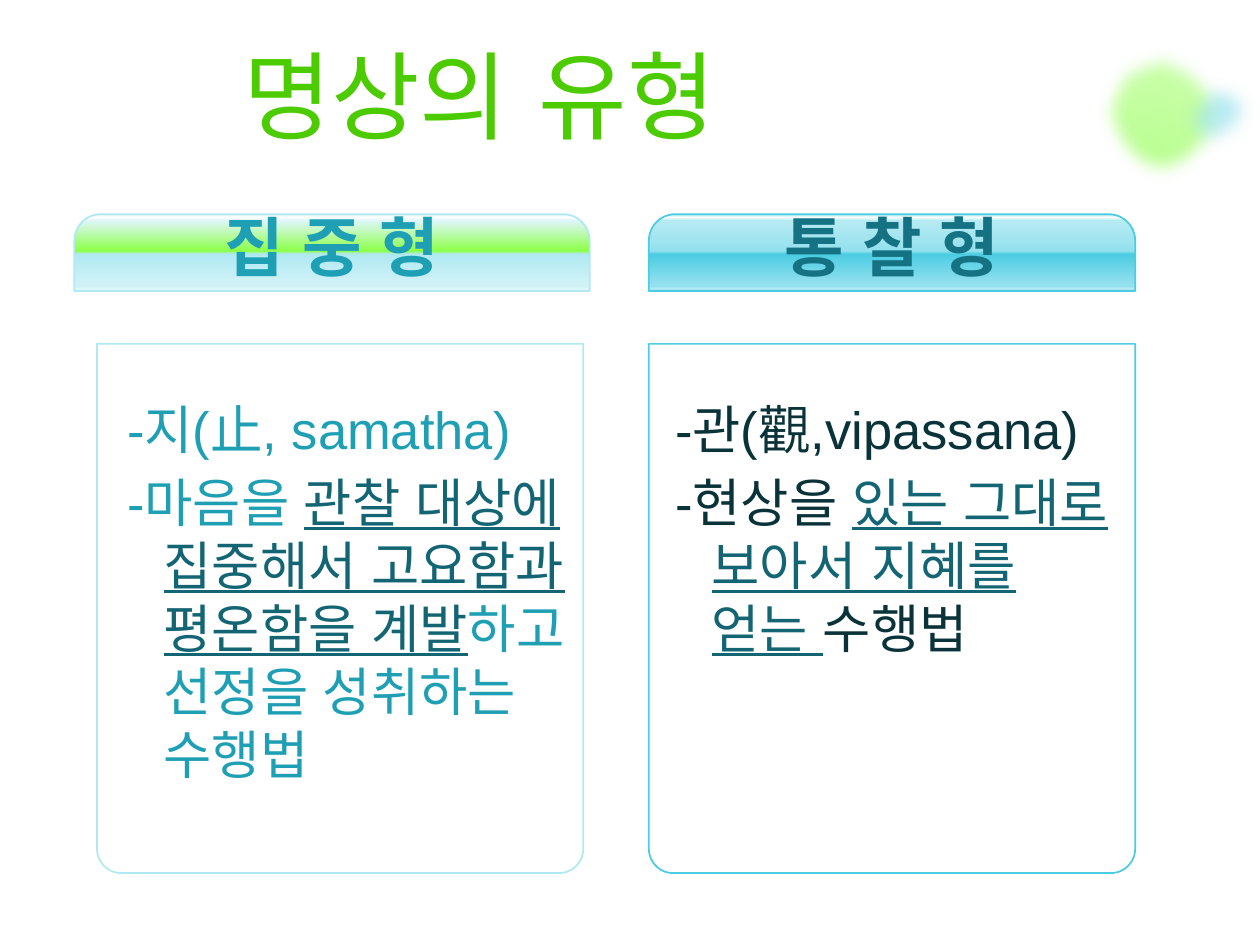
from lxml.etree import SubElement
from pptx import Presentation
from pptx.dml.color import RGBColor
from pptx.enum.shapes import MSO_SHAPE as Preset
from pptx.enum.text import MSO_ANCHOR as Anchor, PP_ALIGN as Align
from pptx.oxml.ns import qn
from pptx.util import Inches, Pt

COLORS = {
    "title": "4CCB00", "emphasis": "136573", "white": "FFFFFF",
    "teal": "1E9FB3", "deep": "157282", "ink": "0A3339",
    "pale_line": "B0E9F2", "strong_line": "4BCCE2",
    "lime": "B2FF84", "aqua": "8CDFEC", "aqua_edge": "B0E9F2",
}
TITLE = "명상의 유형"
GLOSS_POSITIONS = (0, 4, 8, 48, 52, 91, 94, 97, 100)
# Each paragraph is a list of (text, is emphasised).
COLUMNS = [
    {
        "heading": "통 찰 형", "heading_color": "deep", "line": "strong_line",
        "gloss": "93E0EE FFFFFF B7EBF3 93E0EE 4BCCE2 93E0EE 93E0EE B7EBF3 93E0EE",
        "header": (5.15, 3.86), "panel": (5.15, 3.86), "body": (5.26, 3.65),
        "body_color": "ink",
        "paragraphs": [
            [("-관(觀,vipassana)", False)],
            [("-현상을 ", False), ("있는 그대로 보아서 지혜를 얻는 ", True),
             ("수행법", False)],
        ],
    },
    {
        "heading": "집 중 형", "heading_color": "teal", "line": "pale_line",
        "gloss": "D0F2F7 FFFFFF DFF6FA 8CFF47 B0E9F2 D0F2F7 D0F2F7 DFF6FA D0F2F7",
        "header": (0.59, 4.09), "panel": (0.77, 3.86), "body": (0.91, 4.09),
        "body_color": "teal",
        "paragraphs": [
            [("-지(止, samatha)", False)],
            [("-마음을 ", False),
             ("관찰 대상에 집중해서 고요함과 평온함을 계발", True),
             ("하고 선정을 성취하는 수행법", False)],
        ],
    },
]
# Outlines: a start point, then Bezier triples (control, control, end).
BLOBS = [
    {
        "frame": (8.61, 0.33, 1.19, 1.15), "rotation": 192.5,
        "stops": [(0, "lime", 100), (100, "lime", 58)],
        "start": (9.74, 1.03),
        "curves": [
            ((9.71, 1.18), (9.74, 1.26), (9.49, 1.39)),
            ((9.36, 1.47), (9.21, 1.5), (9.06, 1.46)),
            ((8.91, 1.43), (8.78, 1.34), (8.7, 1.21)),
            ((8.65, 1.04), (8.59, 0.93), (8.63, 0.78)),
            ((8.66, 0.63), (8.75, 0.5), (8.88, 0.42)),
            ((9.06, 0.37), (9.18, 0.32), (9.31, 0.34)),
            ((9.43, 0.37), (9.55, 0.45), (9.63, 0.58)),
            ((9.71, 0.71), (9.78, 0.88), (9.74, 1.03)),
        ],
    },
    {
        "frame": (9.33, 0.52, 0.67, 0.78), "rotation": 34.8,
        "stops": [(0, "aqua", 100), (100, "aqua_edge", 36)],
        "start": (9.97, 1.05),
        "curves": [
            ((10.03, 0.96), (10, 0.89), (9.99, 0.82)),
            ((9.98, 0.75), (9.97, 0.65), (9.91, 0.6)),
            ((9.85, 0.56), (9.71, 0.54), (9.62, 0.56)),
            ((9.54, 0.58), (9.45, 0.63), (9.39, 0.72)),
            ((9.32, 0.81), (9.32, 0.92), (9.34, 1.01)),
            ((9.35, 1.09), (9.4, 1.19), (9.46, 1.24)),
            ((9.53, 1.29), (9.64, 1.31), (9.71, 1.31)),
            ((9.78, 1.3), (9.81, 1.29), (9.87, 1.2)),
            ((9.87, 1.2), (9.97, 1.05), (9.97, 1.05)),
        ],
    },
]


def rgb(name):
    return RGBColor.from_string(COLORS[name])


def set_gradient(shape, stops):
    """Fill from top to bottom with (percent, hex colour, opacity) stops."""
    shape.fill.gradient()
    shape.fill.gradient_angle = 270
    stop_list = shape.element.spPr.find(".//" + qn("a:gsLst"))
    for old_stop in list(stop_list):
        stop_list.remove(old_stop)
    for percent, color, opacity in stops:
        stop = SubElement(stop_list, qn("a:gs"), pos=str(percent * 1000))
        color_element = SubElement(stop, qn("a:srgbClr"), val=color)
        if opacity < 100:
            SubElement(color_element, qn("a:alpha"), val=str(opacity * 1000))


def bend_outline(shape, start, curves):
    """Replace the straight segments by Bezier curves in the shape's frame."""
    outline = shape.element.spPr.find(".//" + qn("a:path"))
    for segment in list(outline):
        outline.remove(segment)
    outline.set("w", str(shape.width))
    outline.set("h", str(shape.height))
    for tag, points in [("a:moveTo", [start])] + [("a:cubicBezTo", c) for c in curves]:
        segment = SubElement(outline, qn(tag))
        for x, y in points:
            SubElement(segment, qn("a:pt"), x=str(Inches(x) - shape.left),
                       y=str(Inches(y) - shape.top))
    SubElement(outline, qn("a:close"))


def add_blob(slide, blob):
    builder = slide.shapes.build_freeform(*map(Inches, blob["start"]))
    builder.add_line_segments(
        [(Inches(x), Inches(y)) for _, _, (x, y) in blob["curves"]])
    shape = builder.convert_to_shape()
    shape.left, shape.top, shape.width, shape.height = map(Inches, blob["frame"])
    bend_outline(shape, blob["start"], blob["curves"])
    shape.rotation = blob["rotation"]
    set_gradient(shape, [(p, COLORS[c], o) for p, c, o in blob["stops"]])
    shape.line.fill.background()
    shape.shadow.inherit = False
    effects = shape.element.spPr.find(qn("a:effectLst"))
    SubElement(effects, qn("a:softEdge"), rad=str(Pt(10)))


def add_card(slide, span, top, height, rounding, line):
    left, width = span
    shape = slide.shapes.add_shape(
        Preset.ROUND_2_SAME_RECTANGLE,
        Inches(left), Inches(top), Inches(width), Inches(height))
    shape.adjustments[0] = rounding
    shape.adjustments[1] = 0
    shape.shadow.inherit = False
    shape.line.color.rgb = rgb(line)
    shape.line.width = Pt(1)
    return shape


def add_text_box(slide, left, top, width, height):
    frame = slide.shapes.add_textbox(
        Inches(left), Inches(top), Inches(width), Inches(height)).text_frame
    frame.word_wrap = True
    return frame


def style(run, size, color, name="Arial"):
    """Set size, colour and both the Latin and the East Asian font."""
    run.font.size, run.font.name = Pt(size), name
    run.font.color.rgb = rgb(color)
    SubElement(run._r.get_or_add_rPr(), qn("a:ea"), typeface=name)


def add_column(slide, column):
    panel = add_card(slide, column["panel"], 2.73, 4.2, 0.05, column["line"])
    panel.element.spPr.find(qn("a:xfrm")).set("flipV", "1")
    panel.fill.solid()
    panel.fill.fore_color.rgb = rgb("white")
    color_element = panel.element.spPr.find(qn("a:solidFill"))[0]
    SubElement(color_element, qn("a:alpha"), val="40000")

    header = add_card(slide, column["header"], 1.7, 0.61, 0.344, column["line"])
    set_gradient(header, [(percent, color, 100) for percent, color
                          in zip(GLOSS_POSITIONS, column["gloss"].split())])
    frame = header.text_frame
    frame.text = column["heading"]
    frame.vertical_anchor = Anchor.BOTTOM
    paragraph = frame.paragraphs[0]
    paragraph.alignment = Align.CENTER
    style(paragraph.runs[0], 37, column["heading_color"])
    paragraph.runs[0].font.bold = True


def add_body(slide, column):
    left, width = column["body"]
    frame = add_text_box(slide, left, 2.69, width, 4.24)
    frame.margin_top = Inches(0.46)
    for index, parts in enumerate(column["paragraphs"]):
        paragraph = frame.add_paragraph() if index else frame.paragraphs[0]
        if index:
            paragraph.space_before = Pt(6)
        properties = paragraph._p.get_or_add_pPr()
        properties.set("marL", str(Inches(0.29)))
        properties.set("indent", str(Inches(-0.29)))
        for text, emphasised in parts:
            run = paragraph.add_run()
            run.text = text
            style(run, 30, "emphasis" if emphasised else column["body_color"])
            run.font.underline = emphasised


def add_title(slide):
    frame = add_text_box(slide, 0.25, 0.19, 9.49, 1.11)
    frame.text = TITLE
    frame.margin_left = Inches(1.68)
    frame.vertical_anchor = Anchor.MIDDLE
    style(frame.paragraphs[0].runs[0], 55, "title", "DejaVu Sans")


def main():
    presentation = Presentation()
    presentation.slide_width, presentation.slide_height = Inches(10), Inches(7.5)
    slide = presentation.slides.add_slide(presentation.slide_layouts[6])
    for blob in BLOBS:
        add_blob(slide, blob)
    for column in COLUMNS:
        add_column(slide, column)
    add_title(slide)
    for column in reversed(COLUMNS):
        add_body(slide, column)
    presentation.save("out.pptx")


if __name__ == "__main__":
    main()
